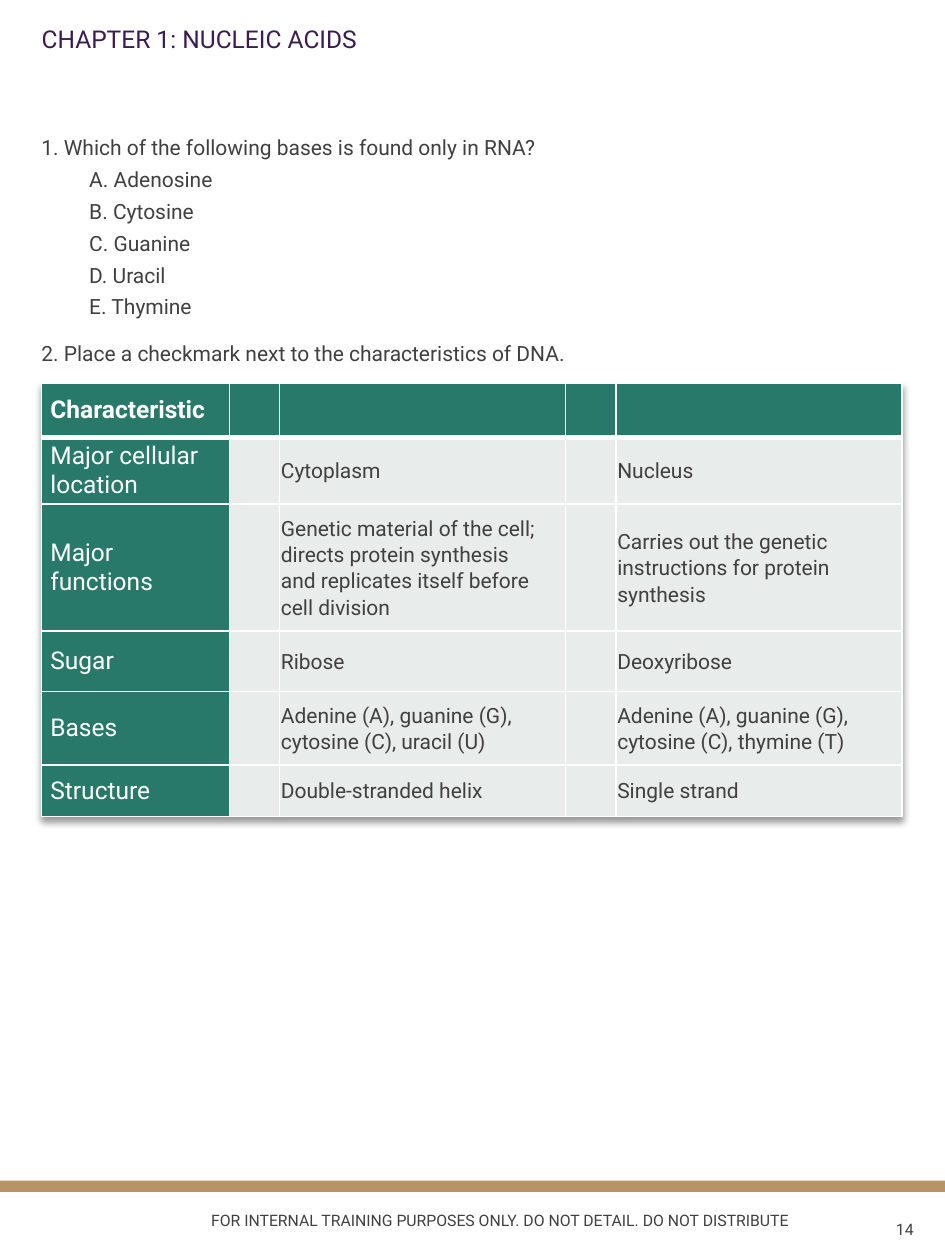
from lxml.etree import SubElement
from pptx import Presentation
from pptx.dml.color import RGBColor
from pptx.enum.shapes import MSO_SHAPE as SHAPE
from pptx.enum.text import MSO_ANCHOR as ANCHOR, PP_ALIGN as ALIGN
from pptx.oxml.ns import qn
from pptx.util import Inches, Pt

INK, PURPLE, GOLD = "404040", "3B1C51", "B89366"
GREEN, PALE, WHITE = "287969", "E8ECEB", "FFFFFF"

OPTIONS = ["A. Adenosine", "B. Cytosine", "C. Guanine", "D. Uracil", "E. Thymine"]
COLUMNS = [1.49, 0.4, 2.27, 0.4, 2.27]
# Row height, characteristic, and the text beside each checkmark column
ROWS = [
    (0.43, "Characteristic", "", ""),
    (0.53, "Major cellular location", "Cytoplasm", "Nucleus"),
    (1.01, "Major functions",
     "Genetic material of the cell; directs protein synthesis\v"
     "and replicates itself before cell division",
     "Carries out the genetic instructions for protein synthesis"),
    (0.48, "Sugar", "Ribose", "Deoxyribose"),
    (0.58, "Bases", "Adenine (A), guanine (G), cytosine (C), uracil (U)",
     "Adenine (A), guanine (G), cytosine (C), thymine (T)"),
    (0.41, "Structure", "Double-stranded helix", "Single strand"),
]


def color(value):
    return RGBColor.from_string(value)


class Page:
    font = "Roboto"

    def __init__(self, deck):
        self.slide = deck.slides.add_slide(deck.slide_layouts[5])
        self.shapes = self.slide.shapes

    def fill_paragraph(self, para, text, size, ink=INK, bold=False, **formats):
        para.text = text
        for name, value in formats.items():
            setattr(para, name, value)
        for span in para.runs:
            span.font.name = self.font
            span.font.size = Pt(size)
            span.font.bold = bold
            span.font.color.rgb = color(ink)

    def title(self, text, left, top, width, height):
        box = self.shapes.title
        place = {"left": left, "top": top, "width": width, "height": height}
        for name, value in place.items():
            setattr(box, name, Inches(value))
        box.text_frame.vertical_anchor = ANCHOR.MIDDLE
        self.fill_paragraph(box.text_frame.paragraphs[0], text, 14, PURPLE,
                            alignment=ALIGN.LEFT, line_spacing=0.9)

    def text(self, place, paragraphs, size, anchor=ANCHOR.TOP):
        """Add a text box; paragraphs are (text, formats, indent) triples."""
        box = self.shapes.add_textbox(*map(Inches, place))
        frame = box.text_frame
        frame.word_wrap = True
        frame.vertical_anchor = anchor
        for number, (text, formats, indent) in enumerate(paragraphs):
            para = frame.add_paragraph() if number else frame.paragraphs[0]
            if indent:
                para._p.get_or_add_pPr().set("marL", str(Inches(indent)))
            self.fill_paragraph(para, text, size, **formats)

    def bar(self, place, fill):
        bar = self.shapes.add_shape(SHAPE.ROUNDED_RECTANGLE, *map(Inches, place))
        bar.adjustments[0] = 0
        bar.shadow.inherit = False
        bar.fill.solid()
        bar.fill.fore_color.rgb = color(fill)
        bar.line.fill.background()

    def borders(self, cell, widths):
        properties = cell._tc.get_or_add_tcPr()
        for side, width in zip("LRTB", widths):
            line = SubElement(properties, qn(f"a:ln{side}"), w=str(Pt(width)))
            fill = SubElement(line, qn("a:solidFill"))
            SubElement(fill, qn("a:srgbClr"), val=WHITE)

    def cell(self, cell, text, row, column):
        header, label = row == 0, column == 0
        self.borders(cell, (1, 1, 3 if row == 1 else 1, 3 if header else 1))
        cell.fill.solid()
        cell.fill.fore_color.rgb = color(GREEN if header or label else PALE)
        cell.vertical_anchor = ANCHOR.MIDDLE
        cell.margin_left = cell.margin_right = Inches(0.07 if label else 0.01)
        cell.margin_top = cell.margin_bottom = 0
        para = cell.text_frame.paragraphs[0]
        if label:
            self.fill_paragraph(para, text, 14, WHITE, header,
                                space_after=Pt(0 if header else 2))
        elif text:
            self.fill_paragraph(para, text, 12, line_spacing=1.07, space_after=Pt(8))

    def shadow(self, table):
        effects = SubElement(table._tbl.tblPr, qn("a:effectLst"))
        shadow = SubElement(effects, qn("a:outerShdw"), blurRad=str(Pt(4)),
                            dist=str(Pt(3)), dir="5400000", algn="t", rotWithShape="0")
        tone = SubElement(shadow, qn("a:srgbClr"), val="000000")
        SubElement(tone, qn("a:alpha"), val="40000")

    def table(self, left, top, columns, rows):
        height = sum(row[0] for row in rows)
        place = map(Inches, (left, top, sum(columns), height))
        table = self.shapes.add_table(len(rows), len(columns), *place).table
        for column, width in zip(table.columns, columns):
            column.width = Inches(width)
        for r, (height, label, first, second) in enumerate(rows):
            table.rows[r].height = Inches(height)
            for c, text in enumerate((label, "", first, "", second)):
                self.cell(table.cell(r, c), text, r, c)
        style_id = table._tbl.tblPr.find(qn("a:tableStyleId"))
        self.shadow(table)
        table._tbl.tblPr.append(style_id)


def main():
    deck = Presentation()
    deck.slide_width, deck.slide_height = Inches(7.5), Inches(10)
    page = Page(deck)
    page.bar((0, 9.37, 7.5, 0.09), GOLD)
    page.text((6.78, 9.57, 0.57, 0.37), [("14", {"alignment": ALIGN.RIGHT}, 0)],
              9, ANCHOR.MIDDLE)
    page.title("CHAPTER 1: NUCLEIC ACIDS", 0.23, 0.07, 5.64, 0.5)
    questions = [("1. Which of the following bases is found only in RNA?", {}, 0)]
    questions += [(option, {"level": 1, "space_before": Pt(3.8)}, 0.38)
                  for option in OPTIONS]
    questions.append(("2. Place a checkmark next to the characteristics of DNA.",
                      {"space_before": Pt(12)}, 0))
    page.text((0.23, 1.02, 7.12, 8.18), questions, 12)
    page.table(0.33, 3.04, COLUMNS, ROWS)
    page.text((1.29, 9.56, 5.35, 0.36),
              [("FOR INTERNAL TRAINING PURPOSES ONLY. DO NOT DETAIL. DO NOT DISTRIBUTE",
                {"alignment": ALIGN.CENTER}, 0)], 9)
    deck.save("out.pptx")


if __name__ == "__main__":
    main()
